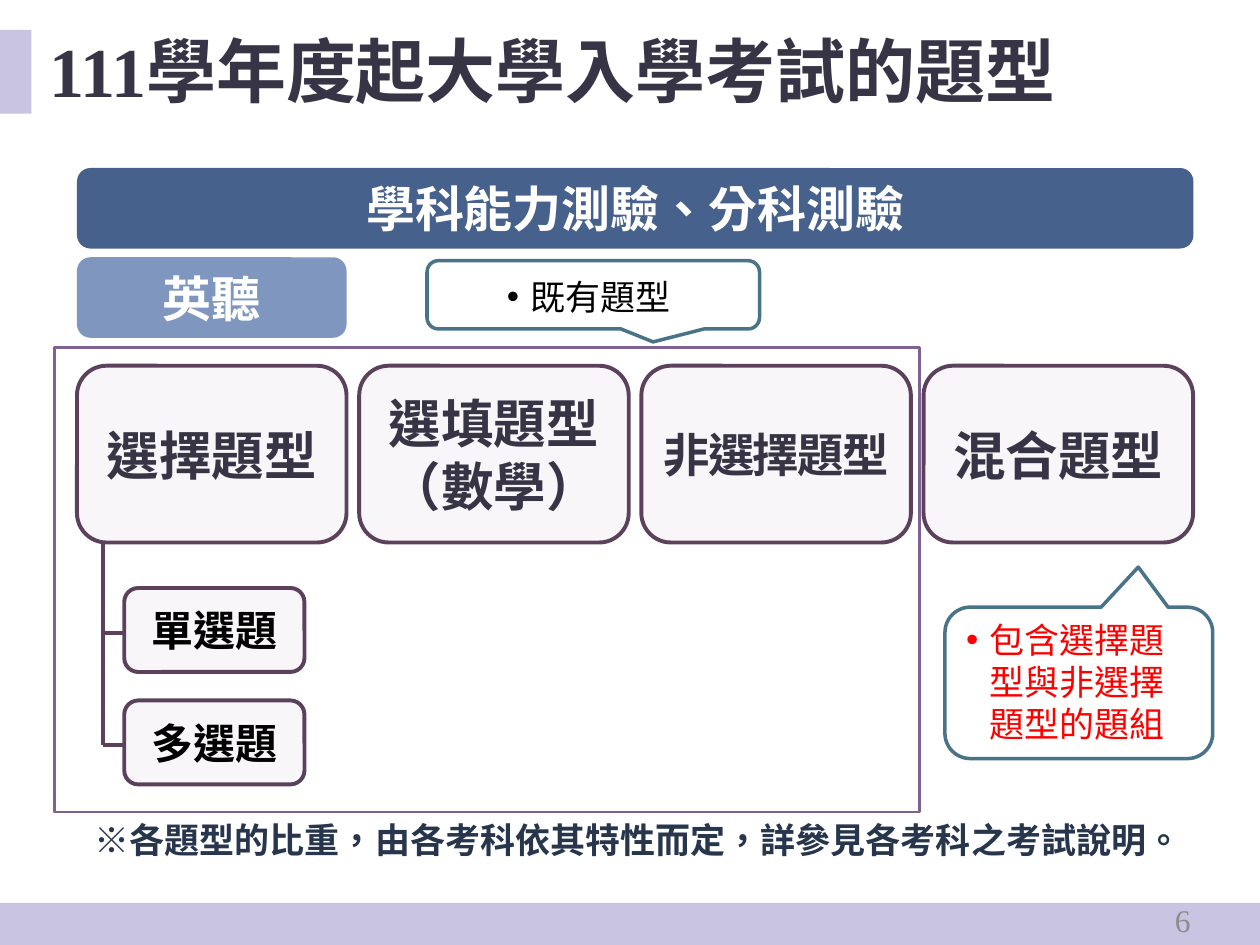
from pptx import Presentation
from pptx.dml.color import RGBColor as RGB
from pptx.enum.shapes import MSO_CONNECTOR as Conn, MSO_SHAPE as Kind
from pptx.enum.text import MSO_ANCHOR as Anchor, PP_ALIGN as Align
from pptx.oxml.ns import qn
from pptx.util import Pt
from lxml.etree import SubElement as Sub

FONT = "Times New Roman"
LILAC, PLUM, PALE, TEAL, INK = "C8C4E2", "5C415D", "F8F6F8", "497389", "373545"


def color(code):
    """Turn a hex string into a colour."""
    return RGB.from_string(code)


def write(shape, text, size, ink, bold=False, align=Align.LEFT,
          anchor=Anchor.MIDDLE, bullet=False, track=0, left=7.2, line=None):
    """Put formatted text into a shape, one paragraph per line."""
    frame = shape.text_frame
    frame.word_wrap = True
    frame.vertical_anchor = anchor
    frame.margin_left = Pt(left)
    frame.text = text
    for para in frame.paragraphs:
        para.alignment = align
        if line:
            para.line_spacing = line
        if bullet:
            props = para._p.get_or_add_pPr()
            props.set("marL", str(Pt(13.5)))
            props.set("indent", str(Pt(-13.5)))
            Sub(props, qn("a:buFont"), typeface="Arial")
            Sub(props, qn("a:buChar"), char="•")
        for run in para.runs:
            font = run.font
            font.name, font.size, font.bold = FONT, Pt(size), bold
            font.color.rgb = color(ink)
            props = run._r.get_or_add_rPr()
            props.set("lang", "zh-TW")
            if track:
                props.set("spc", str(track * 100))


def shape(slide, kind, box, fill=None, edge=None, width=2.25):
    """Add a preset shape with a flat fill and edge."""
    item = slide.shapes.add_shape(kind, *map(Pt, box))
    item.shadow.inherit = False
    if fill:
        item.fill.solid()
        item.fill.fore_color.rgb = color(fill)
    else:
        item.fill.background()
    if edge:
        item.line.color.rgb = color(edge)
        item.line.width = Pt(width)
    else:
        item.line.fill.background()
    return item


def card(slide, box, text, size, ink=INK, fill=PALE, edge=PLUM, track=0):
    """Add a rounded box with a bold centred label."""
    item = shape(slide, Kind.ROUNDED_RECTANGLE, box, fill, edge)
    write(item, text, size, ink, bold=True, align=Align.CENTER, track=track)


def label(slide, box, text, size, ink, **style):
    """Add a text box."""
    write(slide.shapes.add_textbox(*map(Pt, box)), text, size, ink, **style)


def link(slide, x1, y1, x2, y2):
    """Add a plain straight line."""
    item = slide.shapes.add_connector(Conn.STRAIGHT, *map(Pt, (x1, y1, x2, y2)))
    item.line.color.rgb = color(PLUM)
    item.line.width = Pt(2.25)
    Sub(item._element.spPr, qn("a:effectLst"))


def note(slide, box, tip, area, text, ink):
    """Add a callout with a bulleted remark."""
    item = shape(slide, Kind.ROUNDED_RECTANGULAR_CALLOUT, box, None, TEAL, 2)
    for spot, value in enumerate((*tip, 0.167)):
        item.adjustments[spot] = value
    label(slide, area, text, 20, ink, anchor=Anchor.TOP, bullet=True)


def head(slide):
    """Format the title and add the bands and page number."""
    shape(slide, Kind.RECTANGLE, (0, 516, 720, 24), LILAC)
    shape(slide, Kind.RECTANGLE, (0, 17, 18, 48), LILAC)
    title = slide.shapes.title
    title.left, title.top, title.width, title.height = map(Pt, (0, 10, 720, 65.5))
    write(title, "111學年度起大學入學考試的題型", 40, INK, bold=True,
          left=28, line=0.9)
    label(slide, (525.5, 511, 162, 29), "6", 18, "8C8C8C", align=Align.RIGHT)


def types(slide):
    """Add the row of question types and the branches of the first."""
    left, top, wide, tall, step = 44, 209, 154, 101, 161.25
    row = (("選擇題型", 30, 0), ("選填題型\n（數學）", 30, 0),
           ("非選擇題型", 26.5, -1), ("混合題型", 30, 0))
    for spot, (text, size, track) in enumerate(row):
        card(slide, (left + spot * step, top, wide, tall), text, size,
             track=track)
    stem = 59
    link(slide, stem, top + tall, stem, 426)
    for spot, text in enumerate(("單選題", "多選題")):
        y = 336 + spot * 64.25
        link(slide, stem, y + 24 + 1.5, 71, y + 24 + 1.5)
        card(slide, (71, y, 103, 48), text, 24, ink="000000")


def main():
    """Build the slide and save it."""
    deck = Presentation()
    deck.slide_width, deck.slide_height = Pt(720), Pt(540)
    slide = deck.slides.add_slide(deck.slide_layouts[5])
    head(slide)
    types(slide)
    note(slide, (540, 347, 153, 86.5), (0.222, -0.765), (545, 350, 142.5, 80),
         "包含選擇題型與非選擇題型的題組", "FF0000")
    label(slide, (47, 464, 626, 31.5),
          "※各題型的比重，由各考科依其特性而定，詳參見各考科之考試說明。",
          20, "27354D", bold=True, anchor=Anchor.TOP)
    bars = (("英聽", 147, 154, "7F97BF"),
            ("學科能力測驗、分科測驗", 96, 638, "46618C"))
    for text, top, wide, fill in bars:
        card(slide, (44, top, wide, 46), text, 28, "FFFFFF", fill, None)
    shape(slide, Kind.RECTANGLE, (31, 198.5, 494.5, 265.5), None, "806292", 1.5)
    note(slide, (244, 149, 190, 39), (0.18, 0.69), (282.5, 154, 178, 31.5),
         "既有題型", "000000")
    deck.save("out.pptx")


if __name__ == "__main__":
    main()
